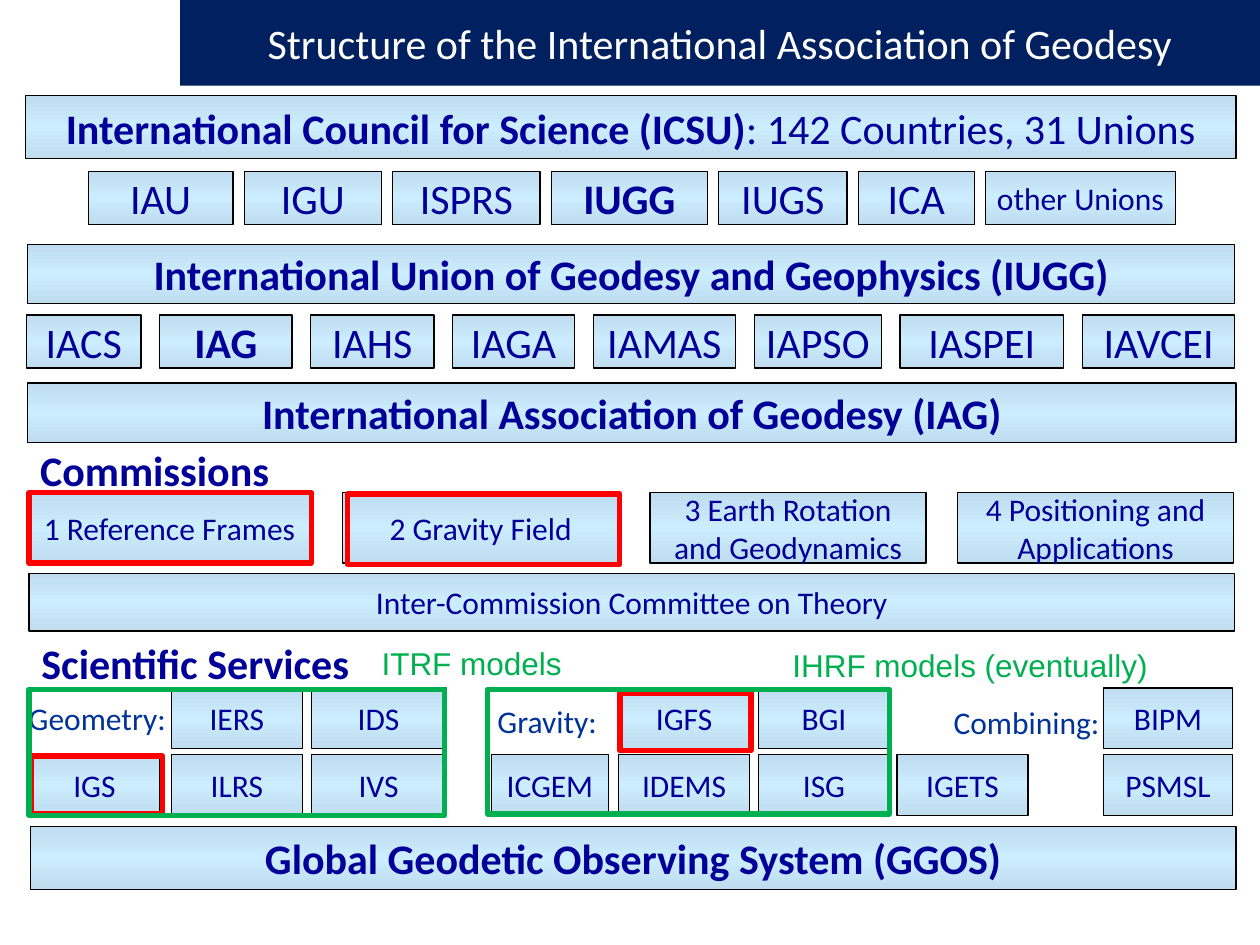
"""Build the slide on the structure of the International Association of Geodesy."""
from copy import deepcopy

from pptx import Presentation, util as u
from pptx.dml.color import RGBColor
from pptx.enum import shapes, text as tx
from pptx.oxml.ns import qn

THEME = dict(edge="BFDDEF", mid="CCECFF", line="000000", ink="000099", label="003399",
             head="002060", white="FFFFFF", red="FF0000", green="00B050",
             big=24, small=18, thin=0.75, thick=3, font="Calibri", alt="Arial")
WIDE, HIGH = 10, 7.5

TITLE = "Structure of the International Association of Geodesy"
BARS = [
    ("International Council for Science (ICSU)", 0.2, 0.76, 9.61, 0.5,
     dict(bold=True, rest=": 142 Countries, 31 Unions")),
    ("International Union of Geodesy and Geophysics (IUGG)", 0.22, 1.94, 9.58, 0.47, dict(bold=True)),
    ("International Association of Geodesy (IAG)", 0.22, 3.04, 9.59, 0.47, dict(bold=True)),
    ("Inter-Commission Committee on Theory", 0.23, 4.55, 9.57, 0.46, dict(size="small")),
    ("Global Geodetic Observing System (GGOS)", 0.24, 6.56, 9.57, 0.5, dict(bold=True)),
]
ROWS = [
    (0.7, 9.33, 1.36, 0.42, [
        ("IAU", 1.15, {}), ("IGU", 1.09, {}), ("ISPRS", 1.17, {}), ("IUGG", 1.24, dict(bold=True)),
        ("IUGS", 1.02, {}), ("ICA", 0.92, {}), ("other Unions", 1.51, dict(size="small"))]),
    (0.21, 9.8, 2.5, 0.42, [
        ("IACS", 0.91, {}), ("IAG", 1.05, dict(bold=True)), ("IAHS", 0.98, {}), ("IAGA", 0.97, {}),
        ("IAMAS", 1.13, {}), ("IAPSO", 1.01, {}), ("IASPEI", 1.3, {}), ("IAVCEI", 1.21, {})]),
    (0.22, 9.79, 3.91, 0.56, [
        (name, wide, dict(size="small")) for name, wide in [
            ("1 Reference Frames", 2.25), ("2 Gravity Field", 2.19),
            ("3 Earth Rotation\nand Geodynamics", 2.19),
            ("4 Positioning and\nApplications", 2.19)]]),
]
COLS = [(0.23, 1.04), (1.36, 1.04), (2.47, 1.07), (3.9, 0.93), (4.91, 1.04),
        (6.02, 1.04), (7.12, 1.04), (8.76, 1.02)]
TIERS = [(5.46, 0.48), (5.99, 0.48)]
GRID = [
    [None, "IERS", "IDS", None, "IGFS", "BGI", None, "BIPM"],
    ["IGS", "ILRS", "IVS", "ICGEM", "IDEMS", "ISG", "IGETS", "PSMSL"],
]
LABELS = [
    ("Commissions", 0.22, 3.48, 2.04, 0.51, dict(bold=True)),
    ("Scientific Services", 0.23, 5.01, 2.98, 0.51, dict(bold=True, wrap=True)),
    ("Geometry:", 0.13, 5.5, 1.3, 0.4, dict(size="small", color="label")),
    ("Gravity:", 3.85, 5.52, 1, 0.4, dict(size="small", color="label")),
    ("Combining:", 7.47, 5.53, 1.37, 0.4, dict(size="small", color="label")),
    ("ITRF models", 2.93, 5.06, 1.65, 0.4, dict(size="small", color="green", font="alt")),
    ("IHRF models (eventually)", 6.19, 5.08, 3.05, 0.4, dict(size="small", color="green", font="alt")),
]
FRAMES = [
    ("red", 0.23, 3.91, 2.24, 0.56), ("red", 2.76, 3.92, 2.16, 0.56),
    ("red", 0.25, 6, 1.04, 0.46), ("red", 4.92, 5.5, 1.04, 0.46),
    ("green", 0.23, 5.47, 3.3, 1), ("green", 3.87, 5.47, 3.19, 0.99),
]


def tint(key):
    return RGBColor.from_string(THEME[key])


def write(shape, text, size="big", color="ink", font="font", bold=False, rest="",
          wrap=False, mid=True):
    frame = shape.text_frame
    frame.word_wrap = wrap
    frame.vertical_anchor = tx.MSO_ANCHOR.MIDDLE if mid else tx.MSO_ANCHOR.TOP
    if not mid:
        frame.auto_size = tx.MSO_AUTO_SIZE.SHAPE_TO_FIT_TEXT
    for i, words in enumerate(text.split("\n")):
        para = frame.add_paragraph() if i else frame.paragraphs[0]
        para.alignment = tx.PP_ALIGN.CENTER if mid else tx.PP_ALIGN.LEFT
        for part, heavy in [(words, bold), (rest, False)]:
            if part:
                run = para.add_run()
                run.text = part
                run.font.size = u.Pt(THEME[size])
                run.font.name = THEME[font]
                run.font.bold = heavy
                run.font.color.rgb = tint(color)


def rect(slide, *at):
    shape = slide.shapes.add_shape(shapes.MSO_SHAPE.RECTANGLE, *map(u.Inches, at))
    shape.shadow.inherit = False
    return shape


def edge(shape, color, width):
    shape.line.color.rgb = tint(color)
    shape.line.width = u.Pt(THEME[width])


def box(slide, text, *at, **form):
    shape = rect(slide, *at)
    shape.fill.gradient()
    shape.fill.gradient_angle = 90
    stops = shape._element.spPr.find(".//" + qn("a:gsLst"))
    stops.append(deepcopy(stops[0]))
    for stop, place, color in zip(shape.fill.gradient_stops, (0, 0.5, 1), ("edge", "mid", "edge")):
        stop.position = place
        stop.color.rgb = tint(color)
    edge(shape, "line", "thin")
    write(shape, text, **form)


def main():
    deck = Presentation()
    deck.slide_width, deck.slide_height = u.Inches(WIDE), u.Inches(HIGH)
    slide = deck.slides.add_slide(deck.slide_layouts[6])

    head = rect(slide, 1.43, -0.01, 8.57, 0.69)
    head.fill.solid()
    head.fill.fore_color.rgb = tint("head")
    head.line.fill.background()
    write(head, TITLE, color="white", wrap=True)

    for text, *at, form in BARS:
        box(slide, text, *at, **form)

    for left, right, top, high, cells in ROWS:
        gap = (right - left - sum(wide for _, wide, _ in cells)) / (len(cells) - 1)
        for text, wide, form in cells:
            box(slide, text, left, top, wide, high, **form)
            left += wide + gap

    for (top, high), names in zip(TIERS, GRID):
        for (left, wide), name in zip(COLS, names):
            if name:
                box(slide, name, left, top, wide, high, size="small")

    for text, *at, form in LABELS:
        write(slide.shapes.add_textbox(*map(u.Inches, at)), text, mid=False, **form)

    for color, *at in FRAMES:
        frame = rect(slide, *at)
        frame.fill.background()
        edge(frame, color, "thick")

    deck.save("out.pptx")


if __name__ == "__main__":
    main()
